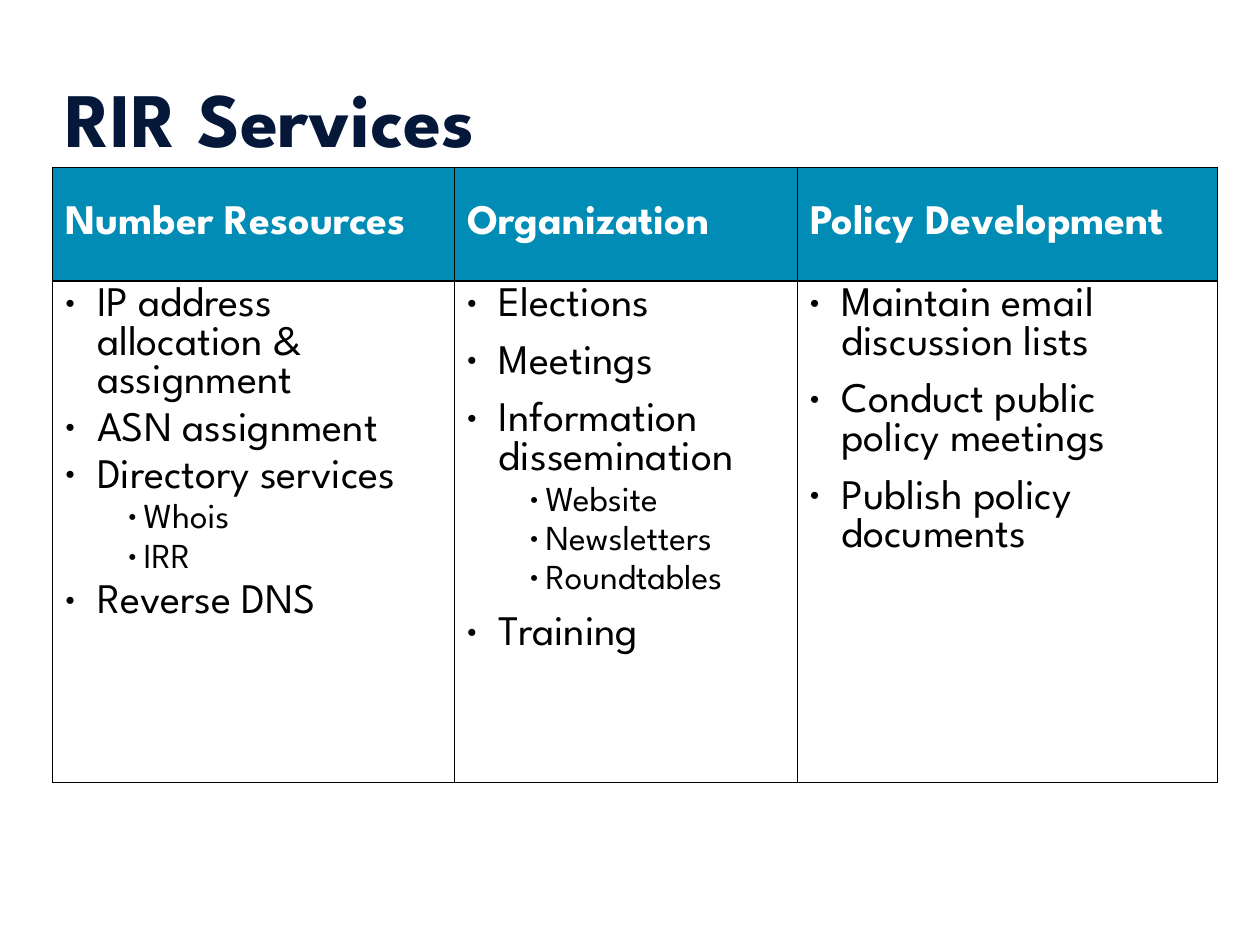
from lxml import etree
from pptx import Presentation
from pptx.dml.color import RGBColor
from pptx.enum.text import MSO_ANCHOR
from pptx.oxml.ns import qn
from pptx.util import Inches, Pt

MIDDLE = MSO_ANCHOR.MIDDLE
TOP = MSO_ANCHOR.TOP
NAVY = RGBColor(0x05, 0x18, 0x3A)
TEAL = RGBColor(0x00, 0x8C, 0xB5)
WHITE = RGBColor(0xFF, 0xFF, 0xFF)
BLACK = RGBColor(0x00, 0x00, 0x00)
FONT = "League Spartan"
MAIN_SIZE, SUB_SIZE = 24, 20
COLUMN_WIDTHS = (3.19, 2.72, 3.33)
ROW_HEIGHTS = (0.9, 3.98)

SERVICES = {
    "Number Resources": [
        ("IP address allocation & assignment", 0, 0),
        ("ASN assignment", 0, 0),
        ("Directory services", 0, 0),
        ("Whois", 1, 0),
        ("IRR", 1, 0),
        ("Reverse DNS", 0, 0),
    ],
    "Organization": [
        ("Elections", 0, 6),
        ("Meetings", 0, 6),
        ("Information dissemination", 0, 0),
        ("Website", 1, 0),
        ("Newsletters", 1, 0),
        ("Roundtables", 1, 6),
        ("Training", 0, 0),
    ],
    "Policy Development": [
        ("Maintain email discussion lists", 0, 6),
        ("Conduct public policy meetings", 0, 6),
        ("Publish policy documents", 0, 6),
    ],
}


class SlideBuilder:
    def __init__(self, slide):
        self.slide = slide

    def style_text(self, paragraph, text, size, color, bold=False):
        paragraph.text = text
        for run in paragraph.runs:
            run.font.name = FONT
            run.font.size = Pt(size)
            run.font.bold = bold
            run.font.color.rgb = color

    def title(self, text, left, top, width, height):
        box = self.slide.shapes.add_textbox(
            Inches(left), Inches(top), Inches(width), Inches(height))
        frame = box.text_frame
        frame.word_wrap = True
        frame.vertical_anchor = MIDDLE
        self.style_text(frame.paragraphs[0], text, 44, NAVY, True)

    def bullet(self, paragraph, text, level, space_after, first):
        size = SUB_SIZE if level else MAIN_SIZE
        margin, indent = (0.62, -0.12) if level else (0.25, -0.25)
        paragraph.level = level
        properties = paragraph._p.get_or_add_pPr()
        properties.set("marL", str(Inches(margin)))
        properties.set("indent", str(Inches(indent)))
        etree.SubElement(properties, qn("a:buSzPct"), val="65000")
        etree.SubElement(properties, qn("a:buChar"), char="•")
        paragraph.space_before = Pt(0 if first else size * 0.2)
        paragraph.space_after = Pt(space_after)
        self.style_text(paragraph, text, size, BLACK)

    def borders(self, cell):
        properties = cell._tc.get_or_add_tcPr()
        for side in ("lnL", "lnR", "lnT", "lnB"):
            line = etree.SubElement(properties, qn(f"a:{side}"), w=str(Pt(0.75)))
            fill = etree.SubElement(line, qn("a:solidFill"))
            etree.SubElement(fill, qn("a:srgbClr"), val=str(BLACK))

    def header_cell(self, cell, heading):
        self.borders(cell)
        cell.fill.solid()
        cell.fill.fore_color.rgb = TEAL
        cell.vertical_anchor = MIDDLE
        self.style_text(
            cell.text_frame.paragraphs[0], heading, MAIN_SIZE, WHITE, True)

    def list_cell(self, cell, items):
        self.borders(cell)
        cell.fill.background()
        cell.vertical_anchor = TOP
        frame = cell.text_frame
        for index, (text, level, space_after) in enumerate(items):
            paragraph = frame.add_paragraph() if index else frame.paragraphs[0]
            self.bullet(paragraph, text, level, space_after, index == 0)

    def table(self, columns, left, top):
        table = self.slide.shapes.add_table(
            len(ROW_HEIGHTS), len(columns), Inches(left), Inches(top),
            Inches(sum(COLUMN_WIDTHS)), Inches(sum(ROW_HEIGHTS))).table
        table.first_row = False
        table.horz_banding = False
        for row, height in zip(table.rows, ROW_HEIGHTS):
            row.height = Inches(height)
        for index, (heading, items) in enumerate(columns.items()):
            table.columns[index].width = Inches(COLUMN_WIDTHS[index])
            self.header_cell(table.cell(0, index), heading)
            self.list_cell(table.cell(1, index), items)


def main():
    presentation = Presentation()
    presentation.slide_width = Inches(10)
    presentation.slide_height = Inches(7.5)
    builder = SlideBuilder(
        presentation.slides.add_slide(presentation.slide_layouts[6]))
    builder.table(SERVICES, 0.42, 1.33)
    builder.title("RIR Services", 0.42, 0.3, 9, 1.25)
    presentation.save("out.pptx")


if __name__ == "__main__":
    main()
